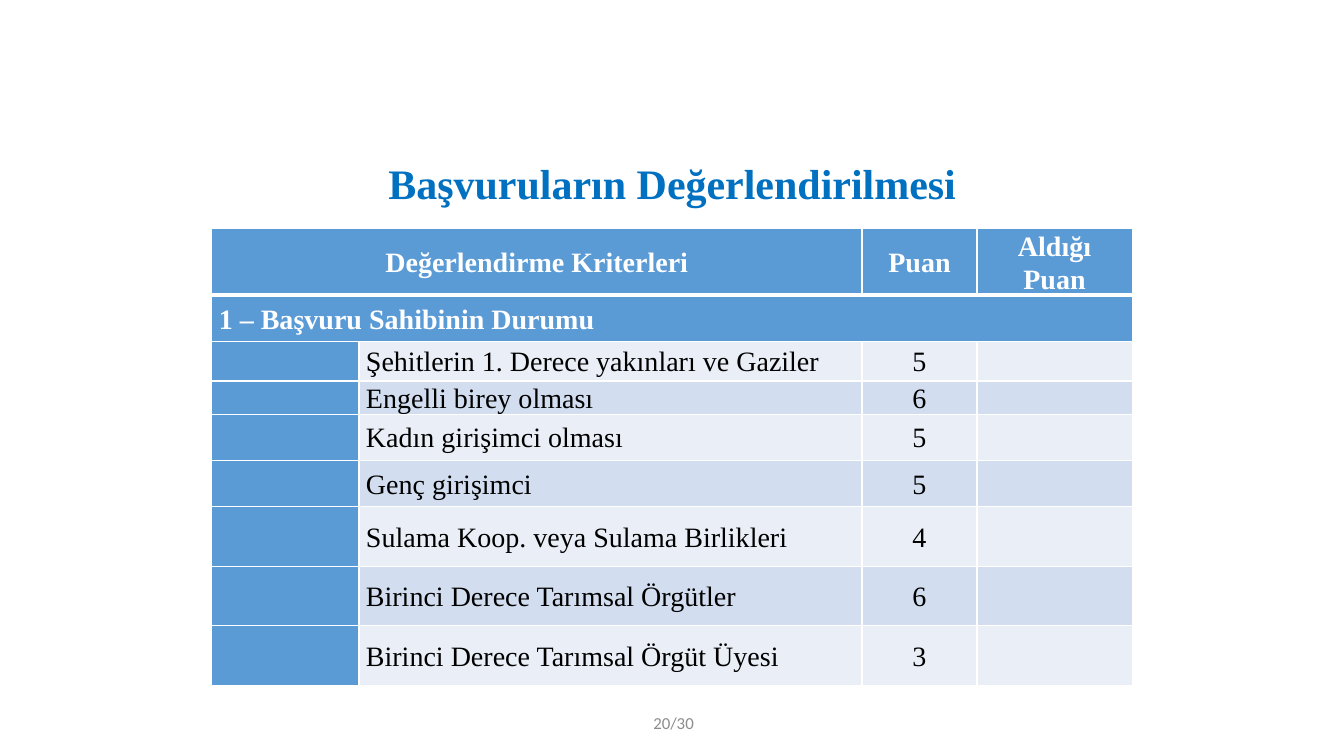
from lxml import etree
from pptx import Presentation
from pptx.dml.color import RGBColor
from pptx.enum.text import MSO_ANCHOR, PP_ALIGN
from pptx.oxml.ns import qn
from pptx.util import Inches, Pt

LEFT, CENTER, RIGHT = PP_ALIGN.LEFT, PP_ALIGN.CENTER, PP_ALIGN.RIGHT
MIDDLE = MSO_ANCHOR.MIDDLE
BLUE, WHITE, BLACK = "5B9BD5", "FFFFFF", "000000"
BANDS = ["EAEFF7", "D2DEEF"]


def write(frame, text, size=20, font="Times New Roman", color=BLACK, bold=False,
          align=LEFT, spacing=1.0, after=0):
    para = frame.paragraphs[0]
    para.alignment = align
    para.line_spacing = spacing
    para.space_after = Pt(after)
    span = para.add_run()
    span.text = text
    span.font.size = Pt(size)
    span.font.name = font
    span.font.bold = bold
    span.font.color.rgb = RGBColor.from_string(color)


def style_cell(cell, fill, top, bottom):
    cell.vertical_anchor = MIDDLE
    cell.margin_left = cell.margin_right = Inches(0.07)
    cell.margin_top = cell.margin_bottom = 0
    properties = cell._tc.get_or_add_tcPr()
    for side, width in (("L", 1), ("R", 1), ("T", top), ("B", bottom)):
        line = etree.SubElement(properties, qn(f"a:ln{side}"), w=str(Pt(width)))
        solid = etree.SubElement(line, qn("a:solidFill"))
        etree.SubElement(solid, qn("a:srgbClr"), val=WHITE)
    cell.fill.solid()
    cell.fill.fore_color.rgb = RGBColor.from_string(fill)


deck = Presentation()
deck.slide_width, deck.slide_height = Inches(13.33), Inches(7.5)
page = deck.slides.add_slide(deck.slide_layouts[5])

title = page.shapes.title
title.left, title.top, title.width, title.height = map(Inches, (0.92, 1.54, 11.5, 0.6))
title.text_frame.vertical_anchor = MIDDLE
write(title.text_frame, "Başvuruların Değerlendirilmesi", size=30, color="0070C0",
      bold=True, align=CENTER, spacing=0.9)

criteria = [
    ("Şehitlerin 1. Derece yakınları ve Gaziler", "5"),
    ("Engelli birey olması", "6"),
    ("Kadın girişimci olması", "5"),
    ("Genç girişimci", "5"),
    ("Sulama Koop. veya Sulama Birlikleri", "4"),
    ("Birinci Derece Tarımsal Örgütler", "6"),
    ("Birinci Derece Tarımsal Örgüt Üyesi", "3"),
]
rows = [
    ("Değerlendirme Kriterleri", "", "Puan", "Aldığı Puan"),
    ("1 – Başvuru Sahibinin Durumu", "", "", ""),
    *[("", criterion, points, "") for criterion, points in criteria],
]
column_widths = [1.46, 4.99, 1.14, 1.54]
row_heights = [0.47, 0.46, 0.39, 0.3, 0.46, 0.46, 0.59, 0.59, 0.59]

table = page.shapes.add_table(
    len(rows), len(column_widths), Inches(2.1), Inches(2.27),
    Inches(sum(column_widths)), Inches(sum(row_heights))).table
for column, width in zip(table.columns, column_widths):
    column.width = Inches(width)
for row, height in zip(table.rows, row_heights):
    row.height = Inches(height)

for row_index, texts in enumerate(rows):
    for column_index, text in enumerate(texts):
        cell = table.cell(row_index, column_index)
        heading = row_index < 2
        fill = BLUE if heading or column_index == 0 else BANDS[row_index % 2]
        style_cell(cell, fill, top=3 if row_index == 1 else 1,
                   bottom=3 if row_index == 0 else 1)
        if text:
            centered = row_index == 0 or column_index == 2
            write(cell.text_frame, text, color=WHITE if heading else BLACK, bold=heading,
                  align=CENTER if centered else LEFT, spacing=1.07, after=3)
table.cell(0, 0).merge(table.cell(0, 1))
table.cell(1, 0).merge(table.cell(1, 3))

number_box = page.shapes.add_textbox(Inches(6.35), Inches(7), Inches(0.63), Inches(0.35))
number_box.text_frame.word_wrap = True
number_box.text_frame.vertical_anchor = MIDDLE
write(number_box.text_frame, "20/30", size=12, font="Calibri", color="8C8C8C", align=RIGHT)

deck.save("out.pptx")
